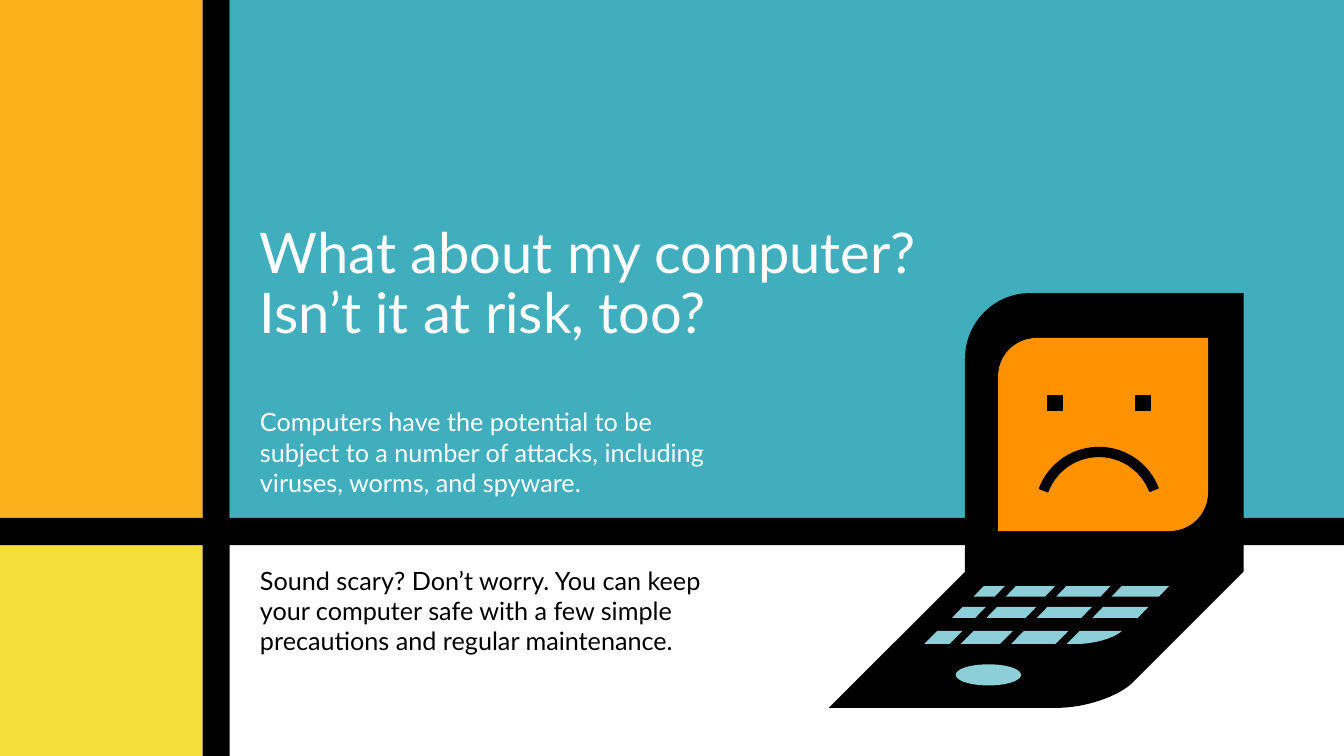
from pptx import Presentation
from pptx.dml.color import RGBColor
from pptx.enum.shapes import MSO_SHAPE
from pptx.enum.text import MSO_ANCHOR
from pptx.util import Pt

RECTANGLE = MSO_SHAPE.RECTANGLE
OVAL = MSO_SHAPE.OVAL
BLOCK_ARC = MSO_SHAPE.BLOCK_ARC
LEAF = MSO_SHAPE.ROUND_2_DIAG_RECTANGLE
TOP, BOTTOM = MSO_ANCHOR.TOP, MSO_ANCHOR.BOTTOM

BLACK, WHITE = "000000", "FFFFFF"
TEAL, AMBER, YELLOW = "41AEBD", "FCB11C", "F4DE3A"
SCREEN_ORANGE, KEY_BLUE = "FF9201", "8DCFD8"
FONT = "Lato"

WIDTH, HEIGHT = 960, 540
BAR_X, BAR_Y, BAR = 144.7, 370, 19.4
PANEL_X, PANEL_Y = BAR_X + BAR, BAR_Y + BAR

KEY_GAP = 8
# top, height, slant, left end of the top edge, key widths
KEY_ROWS = [
    (418.6, 7.5, 7.2, 702.7, (15, 28, 31.6, 33.8)),
    (433.6, 7.7, 7.5, 687.6, (16.6, 28, 31.7, 32.4)),
    (450.6, 9.4, 9.4, 669.6, (18, 28, 31.7)),
]


def colour(hex_string):
    return RGBColor.from_string(hex_string)


def paint(shape, fill, outlined=False):
    shape.shadow.inherit = False
    shape.fill.solid()
    shape.fill.fore_color.rgb = colour(fill)
    if outlined:
        shape.line.color.rgb = colour(fill)
        shape.line.width = Pt(1)
    else:
        shape.line.fill.background()


def add_preset(slide, kind, left, top, width, height, fill, adjustments=(), outlined=False):
    shape = slide.shapes.add_shape(kind, Pt(left), Pt(top), Pt(width), Pt(height))
    for index, value in enumerate(adjustments):
        shape.adjustments[index] = value
    paint(shape, fill, outlined)


def add_outline(slide, points, fill):
    start, *others = points
    builder = slide.shapes.build_freeform(Pt(start[0]), Pt(start[1]))
    builder.add_line_segments([(Pt(x), Pt(y)) for x, y in others], close=True)
    paint(builder.convert_to_shape(), fill)


def rounded_corner(start, corner, end, steps=16):
    """Points of a cubic curve from start to end that bends towards corner."""
    def towards(point):
        return [a + 0.55 * (b - a) for a, b in zip(point, corner)]

    controls = start, towards(start), towards(end), end
    points = []
    for step in range(steps + 1):
        t = step / steps
        weights = (1 - t) ** 3, 3 * t * (1 - t) ** 2, 3 * t ** 2 * (1 - t), t ** 3
        points.append(tuple(sum(w * c[axis] for w, c in zip(weights, controls))
                            for axis in (0, 1)))
    return points


def add_text(slide, left, top, width, height, lines, size, fill,
             margin, anchor=TOP, line_spacing=None):
    frame = slide.shapes.add_textbox(Pt(left), Pt(top), Pt(width), Pt(height)).text_frame
    frame.word_wrap = True
    frame.vertical_anchor = anchor
    frame.margin_left = frame.margin_right = Pt(21.6)
    frame.margin_top = frame.margin_bottom = Pt(margin)
    paragraph = frame.paragraphs[0]
    if line_spacing:
        paragraph.line_spacing = line_spacing
    for index, line in enumerate(lines):
        if index:
            paragraph.add_line_break()
        run = paragraph.add_run()
        run.text = line
        run.font.name = FONT
        run.font.size = Pt(size)
        run.font.color.rgb = colour(fill)


def add_background(slide):
    add_preset(slide, RECTANGLE, PANEL_X, 0, WIDTH - PANEL_X, BAR_Y, TEAL)
    add_preset(slide, RECTANGLE, 0, 0, BAR_X, BAR_Y, AMBER)
    add_preset(slide, RECTANGLE, 0, PANEL_Y, BAR_X, HEIGHT - PANEL_Y, YELLOW)
    add_preset(slide, RECTANGLE, 0, BAR_Y, WIDTH, BAR, BLACK)
    add_preset(slide, RECTANGLE, BAR_X, 0, BAR, HEIGHT, BLACK)


def add_keyboard(slide):
    for top, height, slant, left, widths in KEY_ROWS:
        bottom = top + height
        for width in widths:
            right = left + width
            add_outline(slide, [(left, top), (right, top),
                                (right - slant, bottom), (left - slant, bottom)], KEY_BLUE)
            left = right + KEY_GAP
    # The last key of the bottom row follows the rounded edge of the case.
    curve = rounded_corner((769, bottom), (792, bottom), (801.4, top))
    add_outline(slide, [(left, top), (left - slant, bottom), *curve], KEY_BLUE)
    add_preset(slide, OVAL, 682.6, 474.5, 46.8, 15.1, KEY_BLUE)


def add_sad_laptop(slide):
    lid_corner = rounded_corner((735.8, 209.3), (689.3, 209.3), (689.3, 256))
    base_corner = rounded_corner((755.3, 505.6), (791.3, 505.6), (809.3, 487.3))
    add_outline(slide, [(888.3, 209.3), *lid_corner, (689.3, 408.5), (592, 505.6),
                        *base_corner, (888.3, 408.3)], BLACK)
    add_keyboard(slide)
    add_preset(slide, LEAF, 712.9, 241.4, 150, 137.9, SCREEN_ORANGE, (0.2, 0))
    for eye_left in (748.2, 811):
        add_preset(slide, RECTANGLE, eye_left, 282.4, 10.8, 10.8, BLACK, outlined=True)
    add_preset(slide, BLOCK_ARC, 739.6, 319.7, 90.7, 90.7, BLACK,
               (120.41, 203.3, 0.07), outlined=True)


def main():
    presentation = Presentation()
    presentation.slide_width, presentation.slide_height = Pt(WIDTH), Pt(HEIGHT)
    slide = presentation.slides.add_slide(presentation.slide_layouts[6])
    add_background(slide)
    add_sad_laptop(slide)
    add_text(slide, PANEL_X, 149.8, WIDTH - PANEL_X, 108.7,
             ["What about my computer?", "Isn’t it at risk, too?"],
             40, WHITE, margin=10.8, line_spacing=0.9)
    add_text(slide, PANEL_X, 275.3, 382.3, 94.3,
             ["Computers have the potential to be subject to a number of attacks, "
              "including viruses, worms, and spyware."],
             18, WHITE, margin=14.4, anchor=BOTTOM)
    add_text(slide, PANEL_X, PANEL_Y, 382.3, 94.3,
             ["Sound scary? Don’t worry. You can keep your computer safe with "
              "a few simple precautions and regular maintenance."],
             18, BLACK, margin=14.4)
    presentation.save("out.pptx")


if __name__ == "__main__":
    main()
